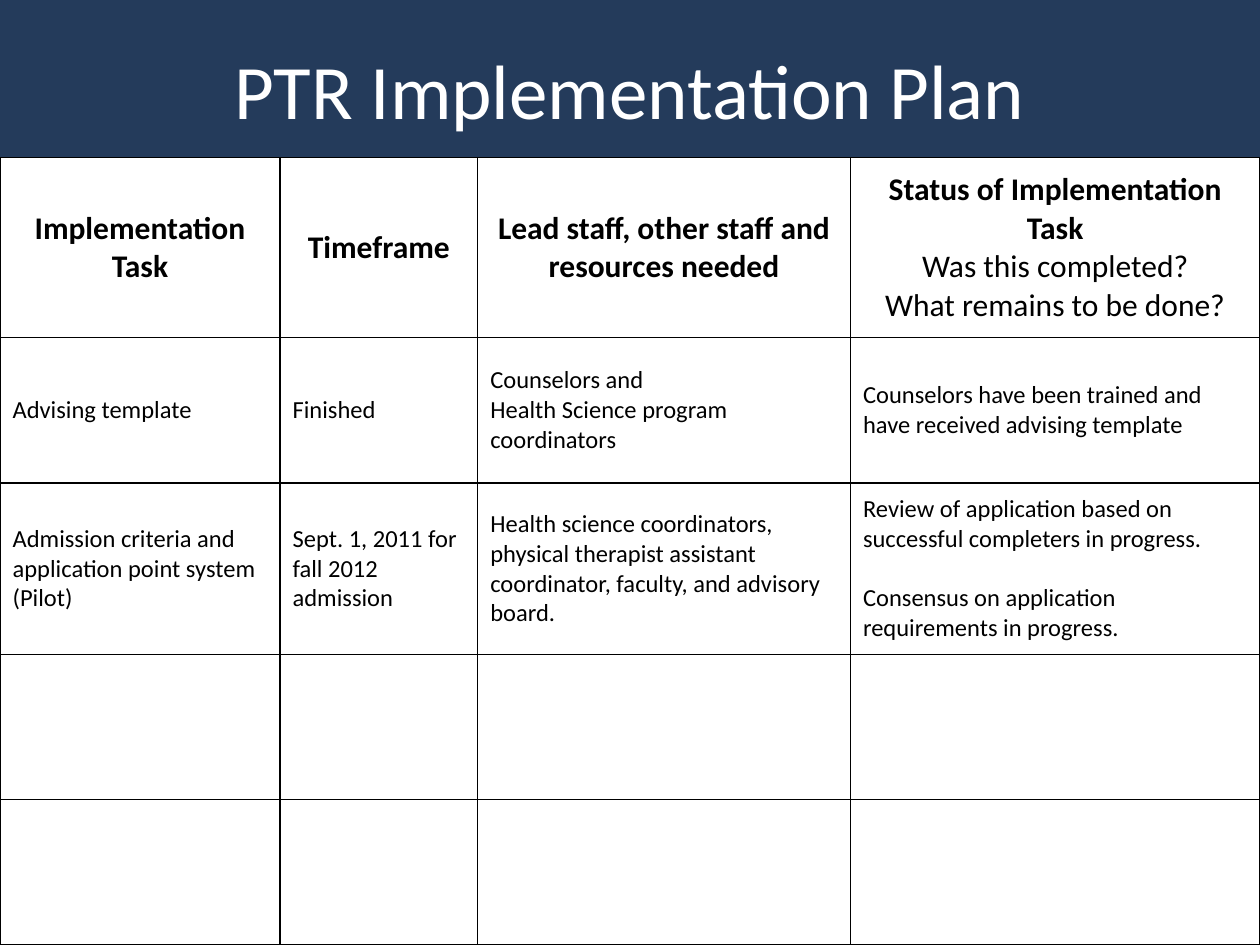
"""Build the PTR Implementation Plan slide."""
from lxml import etree
from pptx import Presentation
from pptx.dml.color import RGBColor
from pptx.enum.shapes import MSO_SHAPE
from pptx.enum.text import MSO_ANCHOR, PP_ALIGN
from pptx.oxml.ns import qn
from pptx.util import Pt

RECT = MSO_SHAPE.RECTANGLE
MIDDLE = MSO_ANCHOR.MIDDLE
CENTER, LEFT = PP_ALIGN.CENTER, PP_ALIGN.LEFT
FONT = "Calibri"
COLORS = {"navy": "243B5B", "white": "FFFFFF", "black": "000000"}

WIDTHS = [160, 113, 213, 234]
HEIGHTS = [103, 83, 98, 83, 83]
ROWS = [
    [
        ["Implementation Task"],
        ["Timeframe"],
        ["Lead staff, other staff and resources needed"],
        ["Status of Implementation Task", "Was this completed?", "What remains to be done?"],
    ],
    [
        ["Advising template"],
        ["Finished"],
        ["Counselors and", "Health Science program coordinators"],
        ["Counselors have been trained and have received advising template"],
    ],
    [
        ["Admission criteria and application point system (Pilot)"],
        ["Sept. 1, 2011 for fall 2012 admission"],
        ["Health science coordinators, physical therapist assistant coordinator, "
         "faculty, and advisory board."],
        ["Review of application based on successful completers in progress.",
         "Consensus on application requirements in progress."],
    ],
]


def style(para, size, color, align, bold=False):
    para.alignment = align
    para.font.name = FONT
    para.font.size = Pt(size)
    para.font.bold = bold
    para.font.color.rgb = RGBColor.from_string(COLORS[color])


def border(cell):
    props = cell._tc.get_or_add_tcPr()
    for side in ("lnL", "lnR", "lnT", "lnB"):
        line = etree.SubElement(props, qn(f"a:{side}"), w=str(Pt(1)))
        fill = etree.SubElement(line, qn("a:solidFill"))
        etree.SubElement(fill, qn("a:srgbClr"), val=COLORS["black"])


prs = Presentation()
prs.slide_width, prs.slide_height = Pt(720), Pt(540)
slide = prs.slides.add_slide(prs.slide_layouts[6])

band = slide.shapes.add_shape(RECT, 0, 0, Pt(720), Pt(90))
band.shadow.inherit = False
band.fill.solid()
band.fill.fore_color.rgb = RGBColor.from_string(COLORS["navy"])
band.line.fill.background()

title = slide.shapes.add_textbox(Pt(54), Pt(18), Pt(612), Pt(66))
frame = title.text_frame
frame.word_wrap = True
frame.vertical_anchor = MIDDLE
frame.text = "PTR Implementation Plan"
style(frame.paragraphs[0], 44, "white", CENTER)

plan = slide.shapes.add_table(
    len(HEIGHTS), len(WIDTHS), 0, Pt(90), Pt(sum(WIDTHS)), Pt(sum(HEIGHTS))
).table
for col, width in zip(plan.columns, WIDTHS):
    col.width = Pt(width)
for row, height in zip(plan.rows, HEIGHTS):
    row.height = Pt(height)

for cell in plan.iter_cells():
    border(cell)
    cell.fill.solid()
    cell.fill.fore_color.rgb = RGBColor.from_string(COLORS["white"])
    cell.vertical_anchor = MIDDLE

for r, texts in enumerate(ROWS):
    head = r == 0
    for c, lines in enumerate(texts):
        cell = plan.cell(r, c)
        cell.text = "\n".join(lines)
        for n, para in enumerate(cell.text_frame.paragraphs):
            style(para, 18 if head else 14, "black", CENTER if head else LEFT, head and n == 0)

plan.cell(2, 3).text_frame.paragraphs[1].space_before = Pt(17)

prs.save("out.pptx")
